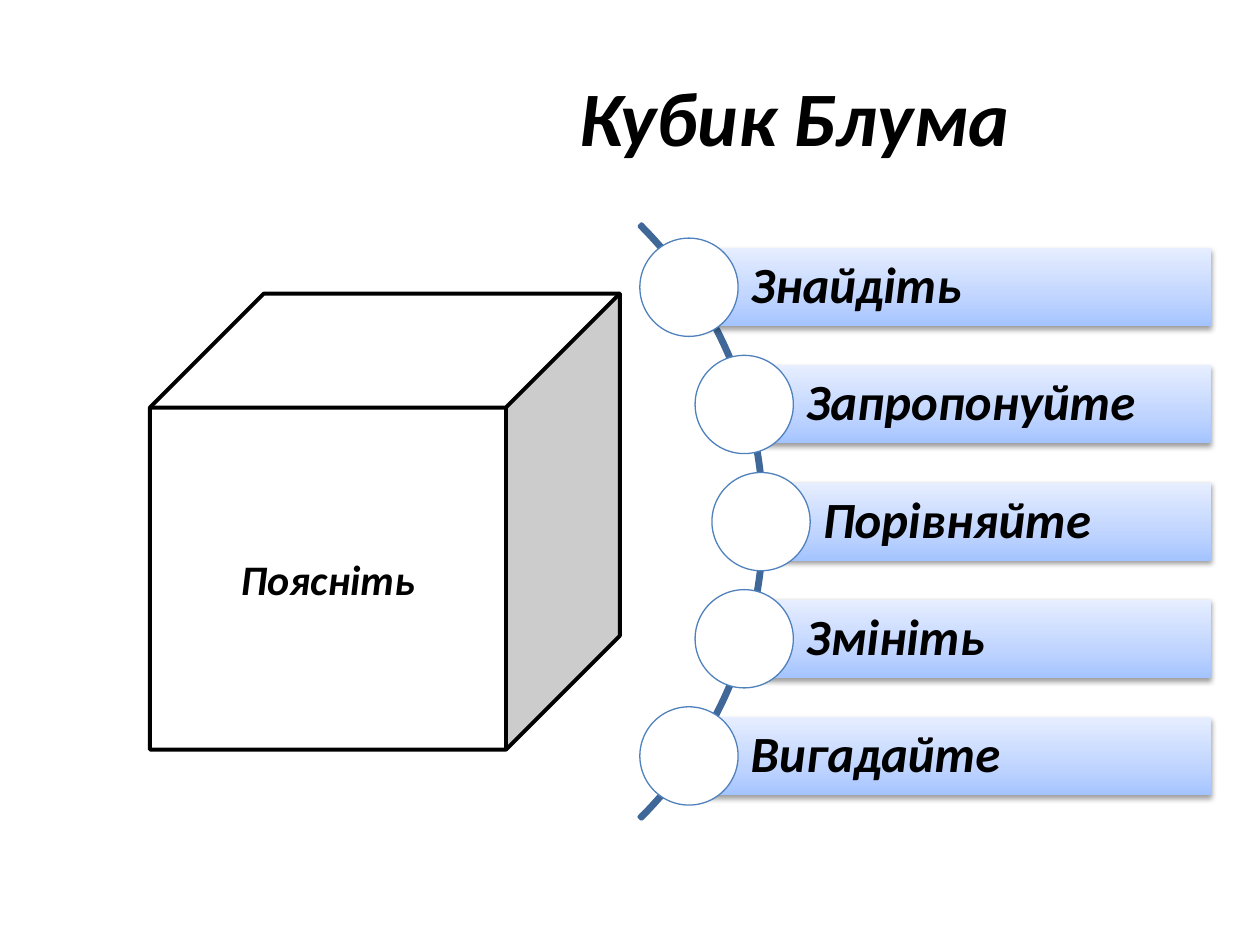
from math import sqrt

from lxml import etree
from pptx import Presentation
from pptx.dml.color import RGBColor
from pptx.enum.shapes import MSO_SHAPE
from pptx.enum.text import MSO_ANCHOR, PP_ALIGN
from pptx.oxml import parse_xml
from pptx.util import Inches, Pt

CUBE, ARC = MSO_SHAPE.CUBE, MSO_SHAPE.BLOCK_ARC
BAR, CIRCLE = MSO_SHAPE.RECTANGLE, MSO_SHAPE.OVAL
MIDDLE = MSO_ANCHOR.MIDDLE
LEFT, CENTER = PP_ALIGN.LEFT, PP_ALIGN.CENTER

# Content
TITLE = "Кубик Блума"
CUBE_LABEL = "Поясніть"
TASKS = ["Знайдіть", "Запропонуйте", "Порівняйте", "Змініть", "Вигадайте"]

# Style
FONT = "Calibri"
BLACK = RGBColor(0x00, 0x00, 0x00)
WHITE = RGBColor(0xFF, 0xFF, 0xFF)
ARC_BLUE = RGBColor(0x3F, 0x67, 0x97)
CIRCLE_BLUE = RGBColor(0x4F, 0x81, 0xBD)
BAR_STOPS = [
    (0, RGBColor(0xA4, 0xC4, 0xFF)),
    (35, RGBColor(0xBF, 0xD4, 0xFF)),
    (100, RGBColor(0xE6, 0xEE, 0xFF)),
]
NAMESPACE = "http://schemas.openxmlformats.org/drawingml/2006/main"

# Geometry in inches
ARC_X, ARC_Y, ARC_SIZE = 2.73, 4.14, 6.68
CIRCLE_PATH_RADIUS = 3.31
ROW_STEP, BAR_HEIGHT, BAR_RIGHT = 0.93, 0.62, 9.61
CIRCLE_SIZE = 0.78


def write(shape, text, size, align):
    frame = shape.text_frame
    frame.word_wrap = True
    frame.vertical_anchor = MIDDLE
    frame.text = text
    para = frame.paragraphs[0]
    para.alignment = align
    font = para.runs[0].font
    font.name, font.size, font.color.rgb = FONT, Pt(size), BLACK
    font.bold = font.italic = True


def add_outlined(shapes, kind, left, top, width, height, fill, line, weight):
    shape = shapes.add_shape(
        kind, Inches(left), Inches(top), Inches(width), Inches(height))
    shape.shadow.inherit = False
    if fill is None:
        shape.fill.background()
    else:
        shape.fill.solid()
        shape.fill.fore_color.rgb = fill
    shape.line.color.rgb = line
    shape.line.width = Pt(weight)
    return shape


def style_bar(bar):
    bar.line.fill.background()
    bar.fill.gradient()
    bar.fill.gradient_angle = 90
    properties = bar.fill._xPr
    stops = properties.find(f".//{{{NAMESPACE}}}gsLst")
    for old in list(stops):
        stops.remove(old)
    for position, color in BAR_STOPS:
        stop = etree.SubElement(
            stops, f"{{{NAMESPACE}}}gs", pos=str(position * 1000))
        etree.SubElement(stop, f"{{{NAMESPACE}}}srgbClr", val=str(color))
    # Soft shadow below the bar
    bar.shadow.inherit = False
    effects = properties.find(f"{{{NAMESPACE}}}effectLst")
    effects.append(parse_xml(
        f'<a:outerShdw xmlns:a="{NAMESPACE}" blurRad="40000" dist="20000" '
        'dir="5400000" rotWithShape="0"><a:srgbClr val="000000">'
        '<a:alpha val="38000"/></a:srgbClr></a:outerShdw>'))


def add_task(shapes, text, center_x, center_y):
    bar = shapes.add_shape(
        BAR, Inches(center_x), Inches(center_y - BAR_HEIGHT / 2),
        Inches(BAR_RIGHT - center_x), Inches(BAR_HEIGHT))
    style_bar(bar)
    write(bar, text, 29, LEFT)
    frame = bar.text_frame
    frame.margin_left = Inches(0.49)
    frame.margin_top = frame.margin_right = frame.margin_bottom = Inches(0.08)
    frame.paragraphs[0].line_spacing = 0.9
    add_outlined(
        shapes, CIRCLE, center_x - CIRCLE_SIZE / 2, center_y - CIRCLE_SIZE / 2,
        CIRCLE_SIZE, CIRCLE_SIZE, WHITE, CIRCLE_BLUE, 0.75)


def main():
    deck = Presentation()
    deck.slide_width, deck.slide_height = Inches(10), Inches(7.5)
    page = deck.slides.add_slide(deck.slide_layouts[6])

    # Title
    title = page.shapes.add_textbox(
        Inches(3.03), Inches(0.44), Inches(6.55), Inches(0.95))
    write(title, TITLE, 44, CENTER)

    # Cube
    cube = add_outlined(
        page.shapes, CUBE, 1.19, 2.33, 3.73, 3.62, WHITE, BLACK, 2.25)
    write(cube, CUBE_LABEL, 24, CENTER)

    # Arc from 315 to 45 degrees, with the tasks along it
    diagram = page.shapes.add_group_shape().shapes
    arc = add_outlined(
        diagram, ARC, ARC_X - ARC_SIZE / 2, ARC_Y - ARC_SIZE / 2,
        ARC_SIZE, ARC_SIZE, None, ARC_BLUE, 2)
    for index, value in enumerate((189, 27, 0.004)):
        arc.adjustments[index] = value
    for index, task in enumerate(TASKS):
        offset = (index - (len(TASKS) - 1) / 2) * ROW_STEP
        center_x = ARC_X + sqrt(CIRCLE_PATH_RADIUS ** 2 - offset ** 2)
        add_task(diagram, task, center_x, ARC_Y + offset)

    deck.save("out.pptx")


if __name__ == "__main__":
    main()
